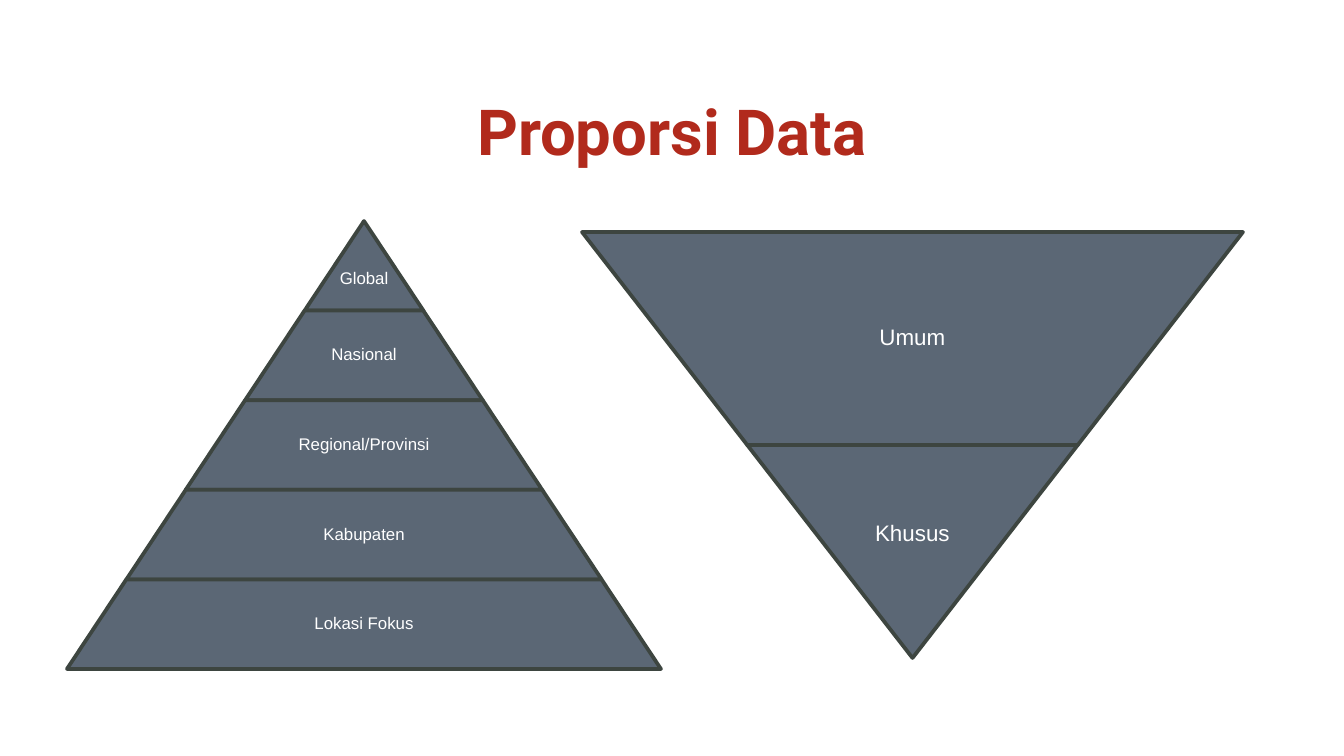
from pptx import Presentation
from pptx import util as u
from pptx.dml.color import RGBColor
from pptx.enum import shapes, text

RED = RGBColor(0xB1, 0x2A, 0x1C)
SLATE = RGBColor(0x5B, 0x67, 0x75)
OUTLINE = RGBColor(0x3D, 0x45, 0x40)
WHITE = RGBColor(0xFF, 0xFF, 0xFF)

PX_PER_INCH = 134.4


def px(length):
    return u.Emu(round(length * 914400 / PX_PER_INCH))


prs = Presentation()
prs.slide_width, prs.slide_height = px(1344), px(756)
slide = prs.slides.add_slide(prs.slide_layouts[5])

# Title
title = slide.shapes.title
title.left, title.top, title.width, title.height = px(105), px(79), px(1134), px(85)
heading = title.text_frame
heading.text = "Proporsi Data"
heading.word_wrap = True
heading.auto_size = text.MSO_AUTO_SIZE.NONE
heading.vertical_anchor = text.MSO_ANCHOR.TOP
heading.margin_left = heading.margin_right = px(13)
heading.margin_top = heading.margin_bottom = px(13)
line = heading.paragraphs[0]
line.alignment = text.PP_ALIGN.CENTER
line.font.name, line.font.size, line.font.bold = "Roboto", u.Pt(34), True
line.font.color.rgb = RED

# Each pyramid: left, top, width, height, inverted, font size,
# and its levels from top to bottom as (label, downward shift of the label)
pyramids = [
    (67, 221, 594, 448, False, 9,
     [("Global", 13), ("Nasional", 0), ("Regional/Provinsi", 0),
      ("Kabupaten", 0), ("Lokasi Fokus", 0)]),
    (582, 232, 661, 426, True, 12,
     [("Umum", 0), ("Khusus", -17)]),
]

for left, top, width, height, inverted, size, levels in pyramids:
    count = len(levels)
    level_height = height / count
    center = left + width / 2
    for i, (label, shift) in enumerate(levels):
        # Level widths grow evenly from the apex
        level_width = width * (count - i if inverted else i + 1) / count
        x, y = center - level_width / 2, top + i * level_height

        level = slide.shapes.add_shape(
            shapes.MSO_SHAPE.TRAPEZOID, px(x), px(y), px(level_width), px(level_height))
        level.adjustments[0] = width / 2 / height
        level.rotation = 180 if inverted else 0
        level.shadow.inherit = False
        level.fill.solid()
        level.fill.fore_color.rgb = SLATE
        level.line.color.rgb = OUTLINE
        level.line.width = u.Pt(2)

        # Upright label over the level
        caption = slide.shapes.add_textbox(
            px(x), px(y + shift), px(level_width), px(level_height)).text_frame
        caption.text = label
        caption.word_wrap = True
        caption.vertical_anchor = text.MSO_ANCHOR.MIDDLE
        caption.margin_left = caption.margin_right = px(2)
        caption.margin_top = caption.margin_bottom = px(2)
        line = caption.paragraphs[0]
        line.alignment = text.PP_ALIGN.CENTER
        line.line_spacing = 0.9
        line.font.name, line.font.size = "Arial", u.Pt(size)
        line.font.color.rgb = WHITE

prs.save("out.pptx")
